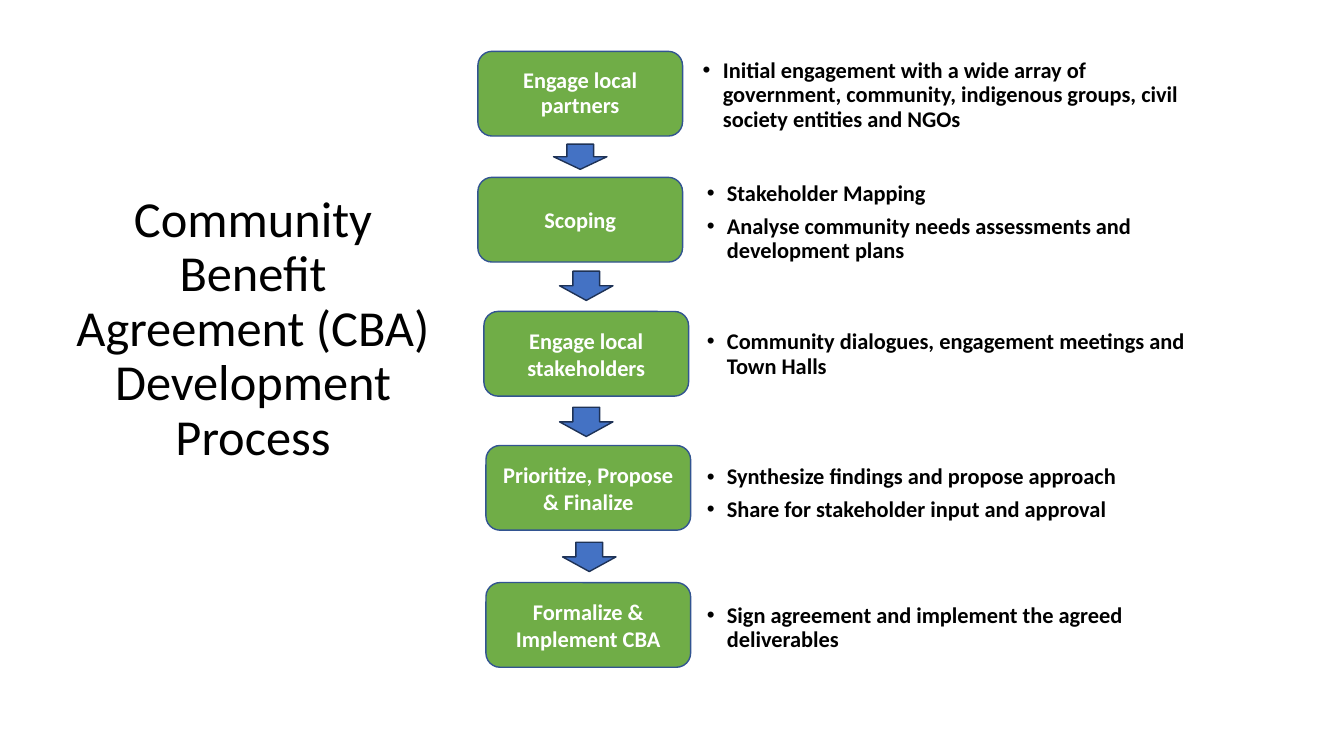
import pptx
import pptx.util
import pptx.dml.color
import pptx.enum.shapes
import pptx.enum.text
import pptx.oxml.ns
import lxml.etree

Inches, Pt = pptx.util.Inches, pptx.util.Pt
RGBColor = pptx.dml.color.RGBColor
SHAPE = pptx.enum.shapes.MSO_SHAPE
ALIGN = pptx.enum.text.PP_ALIGN
ANCHOR = pptx.enum.text.MSO_ANCHOR
FIT = pptx.enum.text.MSO_AUTO_SIZE

BLACK = RGBColor(0x00, 0x00, 0x00)
WHITE = RGBColor(0xFF, 0xFF, 0xFF)
GREEN = RGBColor(0x70, 0xAD, 0x47)
NAVY = RGBColor(0x32, 0x54, 0x91)
BLUE = RGBColor(0x44, 0x72, 0xC4)
DARK = RGBColor(0x1E, 0x32, 0x56)

TITLE = ["Community", "Benefit Agreement (CBA)", "Development Process"]
STEP_W, STEP_H, ARROW_W = 2.03, 0.84, 0.53

# Each step: label, left, top, line spacing, list box, list items
STEPS = [
    ("Engage local partners", 4.74, 0.51, 0.9, (6.86, 0.39, 5.07, 1.14),
     ["Initial engagement with a wide array of government, community, "
      "indigenous groups, civil society entities and NGOs"]),
    ("Scoping", 4.74, 1.76, 1.0, (6.9, 1.61, 4.82, 1.14),
     ["Stakeholder Mapping",
      "Analyse community needs assessments and development plans"]),
    ("Engage local stakeholders", 4.8, 3.09, 1.0, (6.9, 3.08, 4.99, 0.85),
     ["Community dialogues, engagement meetings and Town Halls"]),
    ("Prioritize, Propose & Finalize", 4.82, 4.42, 1.0,
     (6.9, 4.42, 5.21, 0.84),
     ["Synthesize findings and propose approach",
      "Share for stakeholder input and approval"]),
    ("Formalize & Implement CBA", 4.82, 5.78, 1.0, (6.9, 5.79, 5.21, 0.85),
     ["Sign agreement and implement the agreed deliverables"]),
]
# Left, top, height
ARROWS = [(5.49, 1.43, 0.25), (5.55, 2.69, 0.29),
          (5.55, 4.04, 0.29), (5.58, 5.38, 0.29)]


def place(shape, box):
    shape.left, shape.top, shape.width, shape.height = map(Inches, box)


def add_run(para, text, size, color, bold):
    run = para.add_run()
    run.text = text
    font = run.font
    font.name, font.size, font.bold = "Calibri", Pt(size), bold
    font.color.rgb = color


def add_bullet(para):
    props = para._p.get_or_add_pPr()
    props.set("marL", str(Inches(0.31)))
    props.set("indent", str(Inches(-0.2)))
    qn = pptx.oxml.ns.qn
    lxml.etree.SubElement(props, qn("a:buFont")).set("typeface", "Arial")
    lxml.etree.SubElement(props, qn("a:buChar")).set("char", "•")


def fill_title(title, box):
    place(title, box)
    frame = title.text_frame
    frame.auto_size = FIT.NONE
    frame.vertical_anchor = ANCHOR.MIDDLE
    para = frame.paragraphs[0]
    para.alignment, para.line_spacing = ALIGN.CENTER, 0.9
    for i, line in enumerate(TITLE):
        if i:
            para.add_line_break()
        add_run(para, line, 36, BLACK, False)


def add_solid(slide, kind, box, fill, line):
    shape = slide.shapes.add_shape(kind, *map(Inches, box))
    shape.shadow.inherit = False
    shape.fill.solid()
    shape.fill.fore_color.rgb = fill
    shape.line.color.rgb = line
    shape.line.width = Pt(1)
    return shape


def add_step(slide, box, label, spacing):
    step = add_solid(slide, SHAPE.ROUNDED_RECTANGLE, box, GREEN, NAVY)
    frame = step.text_frame
    frame.word_wrap = True
    frame.vertical_anchor = ANCHOR.MIDDLE
    para = frame.paragraphs[0]
    para.alignment, para.line_spacing = ALIGN.CENTER, spacing
    add_run(para, label, 16, WHITE, True)


def fill_list(shape, box, items):
    place(shape, box)
    frame = shape.text_frame
    frame.word_wrap, frame.auto_size = True, FIT.NONE
    frame.vertical_anchor = ANCHOR.TOP
    frame.margin_left = frame.margin_bottom = 0
    frame.margin_top, frame.margin_right = Inches(0.2), Inches(0.04)
    for i, item in enumerate(items):
        para = frame.add_paragraph() if i else frame.paragraphs[0]
        add_bullet(para)
        para.line_spacing = 0.9
        para.space_before = Pt(6 if i else 0)
        add_run(para, item, 16, BLACK, True)


def add_flow(slide):
    """Draw the steps with their lists, and the arrows between them."""
    for i, (label, left, top, spacing, box, items) in enumerate(STEPS):
        add_step(slide, (left, top, STEP_W, STEP_H), label, spacing)
        if i:
            notes = slide.shapes.add_textbox(*map(Inches, box))
        else:
            notes = slide.placeholders[1]
        fill_list(notes, box, items)
    for left, top, height in ARROWS:
        add_solid(slide, SHAPE.DOWN_ARROW, (left, top, ARROW_W, height),
                  BLUE, DARK)


def main():
    deck = pptx.Presentation()
    deck.slide_width, deck.slide_height = Inches(13.33), Inches(7.5)
    slide = deck.slides.add_slide(deck.slide_layouts[1])
    fill_title(slide.shapes.title, (0.59, 0.96, 3.84, 4.63))
    add_flow(slide)
    deck.save("out.pptx")


if __name__ == "__main__":
    main()
